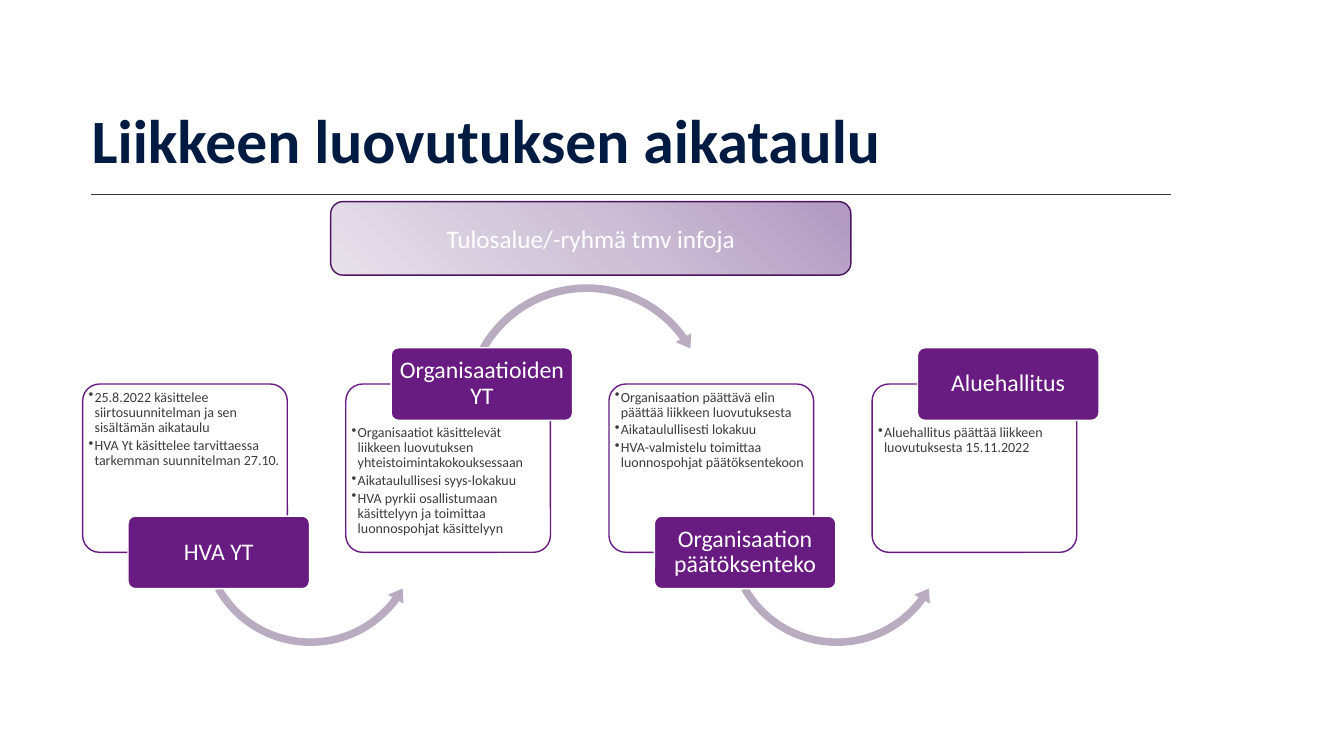
import pptx
import pptx.dml.color
import pptx.enum.shapes
import pptx.enum.text
import pptx.oxml
import pptx.oxml.ns
import pptx.util
from lxml import etree

Inches, Pt = pptx.util.Inches, pptx.util.Pt
RGBColor = pptx.dml.color.RGBColor
Shape = pptx.enum.shapes.MSO_SHAPE
Anchor = pptx.enum.text.MSO_ANCHOR
Align = pptx.enum.text.PP_ALIGN
qn = pptx.oxml.ns.qn

NAVY = RGBColor(0x00, 0x1B, 0x42)
GREY = RGBColor(0x3C, 0x3C, 0x3C)
PURPLE = RGBColor(0x68, 0x1C, 0x82)
DARK_PURPLE = RGBColor(0x4D, 0x15, 0x60)
LILAC = RGBColor(0xB9, 0xAC, 0xC1)
WHITE = RGBColor(0xFF, 0xFF, 0xFF)
BANNER_STOPS = [
    (0, RGBColor(0xB1, 0x99, 0xC1)),
    (50, RGBColor(0xCF, 0xC2, 0xD7)),
    (100, RGBColor(0xE7, 0xE1, 0xEB)),
]

TITLE = "Liikkeen luovutuksen aikataulu"
BANNER = "Tulosalue/-ryhmä tmv infoja"
STEPS = [
    ("HVA YT", [
        "25.8.2022 käsittelee siirtosuunnitelman ja sen sisältämän aikataulu",
        "HVA Yt käsittelee tarvittaessa tarkemman suunnitelman 27.10.",
    ]),
    ("Organisaatioiden YT", [
        "Organisaatiot käsittelevät liikkeen luovutuksen yhteistoimintakokouksessaan",
        "Aikataulullisesi syys-lokakuu",
        "HVA pyrkii osallistumaan käsittelyyn ja toimittaa luonnospohjat käsittelyyn",
    ]),
    ("Organisaation päätöksenteko", [
        "Organisaation päättävä elin päättää liikkeen luovutuksesta",
        "Aikataulullisesti lokakuu",
        "HVA-valmistelu toimittaa luonnospohjat päätöksentekoon",
    ]),
    ("Aluehallitus", ["Aluehallitus päättää liikkeen luovutuksesta 15.11.2022"]),
]

CARD_LEFT, CARD_TOP, CARD_PITCH = 0.82, 3.81, 2.61
TAG_SHIFT, ARROW_SHIFT = 0.45, 1.12
# Tag top, text inset at the card top, and the arrow that leaves the tag
TAG_BELOW = {
    "tag_top": 5.12, "inset": 0.01, "arrow": Shape.LEFT_CIRCULAR_ARROW,
    "arrow_top": 4.18, "arrow_size": 2.28,
    "bends": (0.033, 4.127, 21.882, 90.245, 0.039),
}
TAG_ABOVE = {
    "tag_top": 3.45, "inset": 0.36, "arrow": Shape.CIRCULAR_ARROW,
    "arrow_top": 2.77, "arrow_size": 2.54,
    "bends": (0.03, 3.675, 194.569, 125.755, 0.035),
}


def apply(target, formats):
    for name, value in formats.items():
        setattr(target, name, value)


def add_box(page, kind, place, fill=None, line=None, bends=()):
    """Add a flat preset shape; place is left, top, width, height in inches."""
    box = page.shapes.add_shape(kind, *[Inches(length) for length in place])
    box.shadow.inherit = False
    for index, bend in enumerate(bends):
        box.adjustments[index] = bend
    if fill is not None:
        box.fill.solid()
        box.fill.fore_color.rgb = fill
    if line is None:
        box.line.fill.background()
    else:
        box.line.color.rgb = line
        box.line.width = Pt(1)
    return box


def write(box, lines, size, color, align, anchor, insets=None, bold=False,
          spacing=0.9, after=0, bullets=False):
    """Fill a shape with paragraphs; insets are left, top, right, bottom."""
    frame = box.text_frame
    apply(frame, {"word_wrap": True, "vertical_anchor": anchor})
    if insets:
        sides = ("margin_left", "margin_top", "margin_right", "margin_bottom")
        apply(frame, dict(zip(sides, map(Inches, insets))))
    for index, line in enumerate(lines):
        para = frame.paragraphs[0] if index == 0 else frame.add_paragraph()
        apply(para, {"alignment": align, "line_spacing": spacing,
                     "space_after": Pt(after)})
        if bullets:
            properties = para._p.get_or_add_pPr()
            properties.set("marL", str(Inches(0.06)))
            properties.set("indent", str(-Inches(0.06)))
            etree.SubElement(properties, qn("a:buChar")).set("char", "•")
        span = para.add_run()
        span.text = line
        apply(span.font, {"name": "Calibri", "size": Pt(size), "bold": bold})
        span.font.color.rgb = color


def add_title(page):
    title = page.shapes.title
    apply(title, {"left": Inches(0.81), "top": Inches(0.35),
                  "width": Inches(10.1), "height": Inches(1.45)})
    write(title, [TITLE], 44, NAVY, Align.LEFT, Anchor.BOTTOM, bold=True)
    rule = page.shapes.add_connector(
        pptx.enum.shapes.MSO_CONNECTOR.STRAIGHT,
        Inches(0.9), Inches(1.93), Inches(11.61), Inches(1.93))
    rule.line.color.rgb = GREY
    rule.line.width = Pt(0.5)
    etree.SubElement(rule._element.spPr, qn("a:effectLst"))


def add_step(page, index, name, lines):
    """Add a card, the arrow to the next step and the name tag on top."""
    left = CARD_LEFT + index * CARD_PITCH
    side = TAG_ABOVE if index % 2 else TAG_BELOW
    card = add_box(page, Shape.ROUNDED_RECTANGLE, (left, CARD_TOP, 2.03, 1.67),
                   WHITE, PURPLE, (0.1,))
    fill_color = card._element.spPr.find(qn("a:solidFill"))[0]
    etree.SubElement(fill_color, qn("a:alpha")).set("val", "90000")
    write(card, lines, 10, GREY, Align.LEFT, Anchor.TOP,
          (0.01, side["inset"], 0.01, 0.01), after=1.8, bullets=True)
    if index < len(STEPS) - 1:
        size = side["arrow_size"]
        add_box(page, side["arrow"],
                (left + ARROW_SHIFT, side["arrow_top"], size, size),
                LILAC, bends=side["bends"])
    tag = add_box(page, Shape.ROUNDED_RECTANGLE,
                  (left + TAG_SHIFT, side["tag_top"], 1.8, 0.72),
                  PURPLE, WHITE, (0.1,))
    write(tag, [name], 17, WHITE, Align.CENTER, Anchor.MIDDLE,
          (0.04, 0.02, 0.04, 0.02))


def add_banner(page):
    banner = add_box(page, Shape.ROUNDED_RECTANGLE, (3.28, 2, 5.16, 0.73),
                     line=DARK_PURPLE)
    stops = "".join(
        f'<a:gs pos="{position * 1000}"><a:srgbClr val="{color}"/></a:gs>'
        for position, color in BANNER_STOPS)
    gradient = pptx.oxml.parse_xml(
        f'<a:gradFill {pptx.oxml.ns.nsdecls("a")}><a:gsLst>{stops}</a:gsLst>'
        '<a:path path="circle"><a:fillToRect l="100000" b="100000"/></a:path>'
        '</a:gradFill>')
    banner._element.spPr.find(qn("a:prstGeom")).addnext(gradient)
    write(banner, [BANNER], 18, WHITE, Align.CENTER, Anchor.MIDDLE, spacing=1.0)


def main():
    deck = pptx.Presentation()
    apply(deck, {"slide_width": Inches(13.33), "slide_height": Inches(7.5)})
    page = deck.slides.add_slide(deck.slide_layouts.get_by_name("Title Only"))
    add_title(page)
    for index, (name, lines) in enumerate(STEPS):
        add_step(page, index, name, lines)
    add_banner(page)
    deck.save("out.pptx")


if __name__ == "__main__":
    main()
